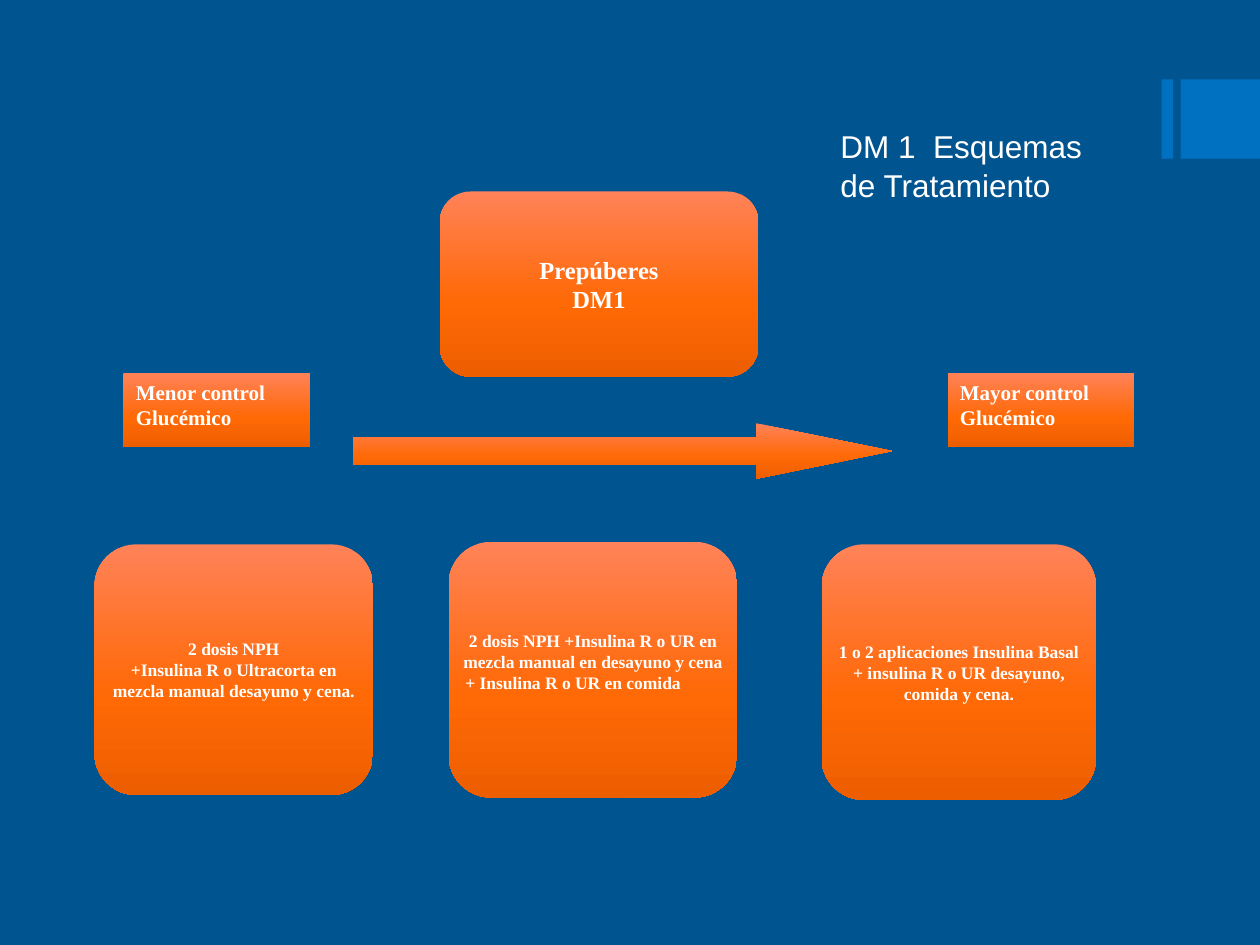
from copy import deepcopy
from pptx import Presentation
from pptx import util as u
from pptx.dml.color import RGBColor
from pptx.enum import shapes as sh, text as t

NAVY = RGBColor(0x00, 0x54, 0x90)
BLUE = RGBColor(0x00, 0x70, 0xC0)
WHITE = RGBColor(0xFF, 0xFF, 0xFF)
WARM = [(0, RGBColor(0xFF, 0x82, 0x58)),
        (0.6, RGBColor(0xFF, 0x69, 0x06)),
        (1, RGBColor(0xED, 0x5E, 0x00))]
KIND = sh.MSO_SHAPE
ALIGN = t.PP_ALIGN
ANCHOR = t.MSO_ANCHOR


def style(item, **form):
    """Set each format value on an object."""
    for key, val in form.items():
        setattr(item, key, val)


def inches(box):
    """Turn a box of numbers into lengths."""
    return [u.Inches(n) for n in box]


def blend(fill):
    """Fill with the three-stop orange gradient, top to bottom."""
    fill.gradient()
    fill.gradient_angle = 270
    first = fill._fill._gradFill.gsLst[0]
    first.addnext(deepcopy(first))
    for stop, (place, tone) in zip(fill.gradient_stops, WARM):
        stop.color.rgb = tone
        stop.position = place


def add_form(slide, kind, box):
    """Add a preset shape without line or shadow."""
    form = slide.shapes.add_shape(kind, *inches(box))
    form.shadow.inherit = False
    form.line.fill.background()
    return form


def write(frame, lines, size, align, face="Times New Roman", bold=True):
    """Write one paragraph per line in white."""
    frame.text = "\n".join(lines)
    for para in frame.paragraphs:
        para.alignment = align
        style(para.font, size=u.Pt(size), name=face, bold=bold)
        para.font.color.rgb = WHITE


def add_card(slide, box, lines, size=10, foot=0):
    """Add a rounded card with centred text."""
    card = add_form(slide, KIND.ROUNDED_RECTANGLE, box)
    blend(card.fill)
    style(card.text_frame, word_wrap=True, vertical_anchor=ANCHOR.MIDDLE,
          margin_left=0, margin_right=0, margin_top=0,
          margin_bottom=u.Inches(foot))
    write(card.text_frame, lines, size, ALIGN.CENTER)
    return card


def add_label(slide, box, lines):
    """Add a label at one end of the arrow."""
    label = add_form(slide, KIND.RECTANGLE, box)
    blend(label.fill)
    style(label.text_frame, word_wrap=True, vertical_anchor=ANCHOR.TOP)
    write(label.text_frame, lines, 12, ALIGN.LEFT)


def add_head(slide, box):
    """Place the title and the two bars at the right edge."""
    for left, wide in ((9.22, 0.09), (9.37, 0.63)):
        bar = add_form(slide, KIND.RECTANGLE, (left, 0.63, wide, 0.63))
        bar.fill.solid()
        bar.fill.fore_color.rgb = BLUE
    title = slide.shapes.title
    left, top, wide, high = inches(box)
    style(title, left=left, top=top, width=wide, height=high)
    style(title.text_frame, word_wrap=True, vertical_anchor=ANCHOR.TOP,
          auto_size=t.MSO_AUTO_SIZE.NONE)
    write(title.text_frame, ["DM 1  Esquemas de Tratamiento"], 18,
          ALIGN.LEFT, "Arial", False)
    title.text_frame.paragraphs[0].line_spacing = 1.05


def add_scale(slide, box):
    """Place the arrow between its two labels."""
    left, top, wide, high = box
    arrow = add_form(slide, KIND.RIGHT_ARROW,
                     (left + 1.82, top + 0.4, 4.28, 0.44))
    arrow.adjustments[1] = 2.45
    blend(arrow.fill)
    span = 1.48
    for x, word in ((left, "Menor"), (left + wide - span, "Mayor")):
        add_label(slide, (x, top, span, high),
                  [f"{word} control", "Glucémico"])


def add_plans(slide):
    """Place the three treatment cards."""
    add_card(slide, (0.75, 4.32, 2.21, 1.99),
             ["2 dosis NPH", "+Insulina R o Ultracorta en mezcla manual "
              "desayuno y cena."])
    mid = add_card(slide, (3.56, 4.3, 2.29, 2.03),
                   ["2 dosis NPH +Insulina R o UR en mezcla manual en "
                    "desayuno y cena", " + Insulina R o UR en comida"],
                   foot=0.13)
    mid.text_frame.paragraphs[-1].alignment = ALIGN.LEFT
    add_card(slide, (6.52, 4.32, 2.18, 2.03),
             ["1 o 2 aplicaciones Insulina Basal + insulina R o UR "
              "desayuno, comida y cena."])


def main():
    """Build and save the slide."""
    deck = Presentation()
    style(deck, slide_width=u.Inches(10), slide_height=u.Inches(7.5))
    slide = deck.slides.add_slide(deck.slide_layouts[5])
    slide.background.fill.solid()
    slide.background.fill.fore_color.rgb = NAVY
    add_head(slide, (6.57, 0.94, 2.46, 0.33))
    add_card(slide, (3.49, 1.52, 2.53, 1.47), ["Prepúberes", "DM1"], 14)
    add_plans(slide)
    add_scale(slide, (0.98, 2.96, 8.02, 0.59))
    deck.save("out.pptx")


if __name__ == "__main__":
    main()
